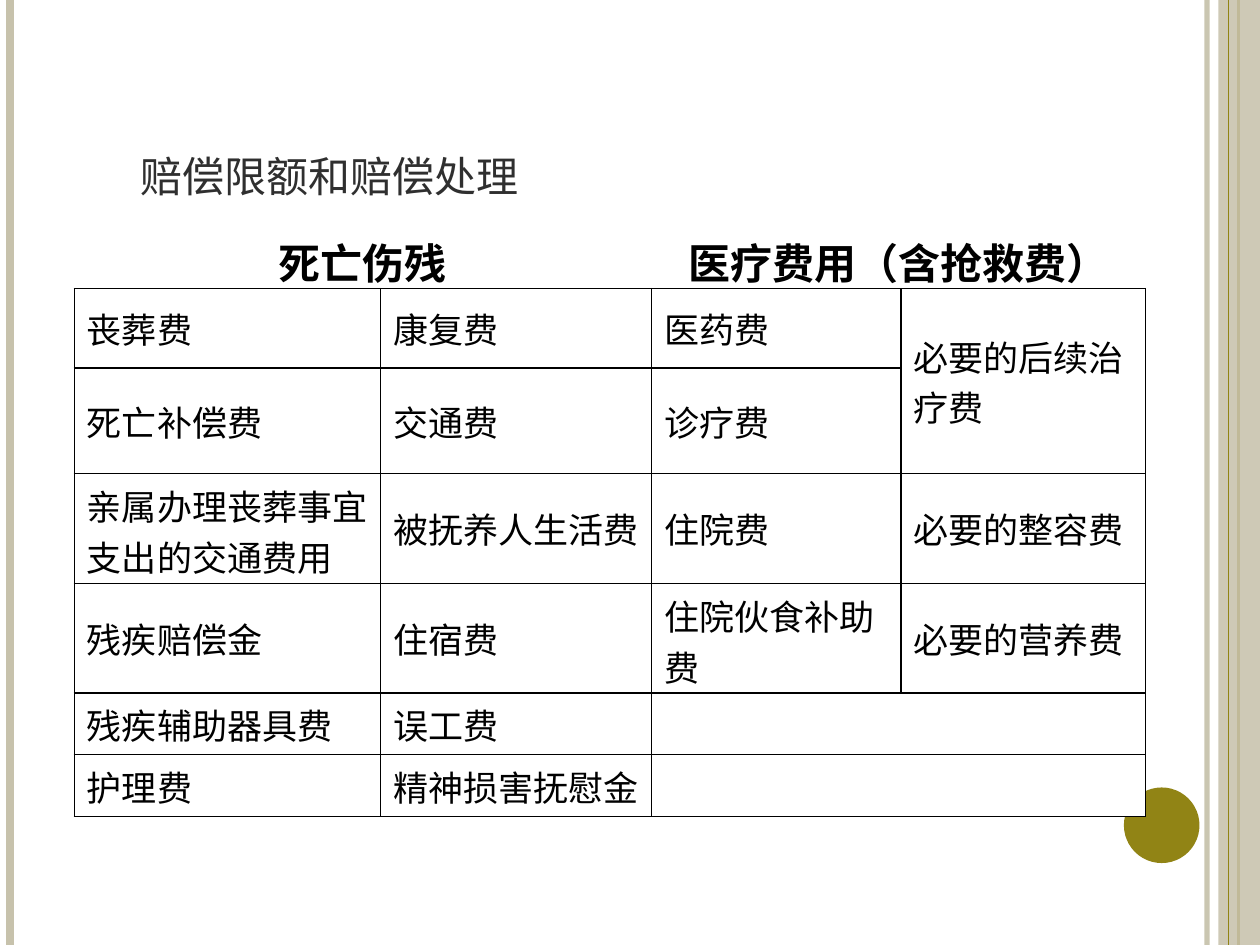
from typing import NamedTuple, Optional

from lxml.etree import SubElement
from pptx import Presentation
from pptx.dml.color import RGBColor
from pptx.enum.shapes import MSO_CONNECTOR as Connector, MSO_SHAPE as Shape
from pptx.enum.text import MSO_ANCHOR as Anchor, PP_ALIGN as Align
from pptx.oxml.ns import qn
from pptx.util import Inches, Pt

BLACK = RGBColor(0x00, 0x00, 0x00)
WHITE = RGBColor(0xFF, 0xFF, 0xFF)
SAND = RGBColor(0xC7, 0xC2, 0xAC)
OLIVE = RGBColor(0x91, 0x84, 0x15)
CHARCOAL = RGBColor(0x2F, 0x2F, 0x2F)
SLIDE_HEIGHT = 7.5
COLUMN_WIDTHS = [2.43, 2.15, 1.98, 1.94]
ROW_HEIGHTS = [0.51, 0.63, 0.84, 0.87, 0.87, 0.49, 0.49]


class Stripe(NamedTuple):
    x: float
    width: float
    color: RGBColor
    opacity: Optional[int] = None


class Ornament(NamedTuple):
    shape: Shape
    left: float
    top: float
    width: float
    height: float
    color: RGBColor
    opacity: Optional[int] = None


LEFT_STRIPES = [Stripe(9.58, 3, SAND, 93), Stripe(0.08, 4.5, SAND), Stripe(9.83, 1.5, OLIVE)]
SIDE_BAND = Ornament(Shape.RECTANGLE, 9.67, 0, 0.33, SLIDE_HEIGHT, SAND, 87)
BAND_STRIPE = Stripe(9.75, 0.75, OLIVE)
DISC = Ornament(Shape.OVAL, 8.92, 6.25, 0.6, 0.6, OLIVE)

EXPENSES = [
    ["死亡伤残", "", "医疗费用（含抢救费）", ""],
    ["丧葬费", "康复费", "医药费", "必要的后续治疗费"],
    ["死亡补偿费", "交通费", "诊疗费", ""],
    ["亲属办理丧葬事宜支出的交通费用", "被抚养人生活费", "住院费", "必要的整容费"],
    ["残疾赔偿金", "住宿费", "住院伙食补助费", "必要的营养费"],
    ["残疾辅助器具费", "误工费", "", ""],
    ["护理费", "精神损害抚慰金", "", ""],
]
MERGES = [((0, 0), (0, 1)), ((0, 2), (0, 3)), ((1, 3), (2, 3)),
          ((5, 2), (5, 3)), ((6, 2), (6, 3))]
FLUSH_CELLS = {(1, 3), (3, 0), (4, 2)}


def set_opacity(properties, opacity: Optional[int]) -> None:
    if opacity is not None:
        color = next(properties.iter(qn("a:srgbClr")))
        SubElement(color, qn("a:alpha"), val=str(opacity * 1000))


def draw_stripe(slide, stripe: Stripe) -> None:
    x = Inches(stripe.x)
    line = slide.shapes.add_connector(Connector.STRAIGHT, x, 0, x, Inches(SLIDE_HEIGHT))
    line.line.color.rgb = stripe.color
    line.line.width = Pt(stripe.width)
    properties = line._element.spPr
    set_opacity(properties, stripe.opacity)
    SubElement(properties, qn("a:effectLst"))


def draw_ornament(slide, ornament: Ornament) -> None:
    bounds = [Inches(length) for length in ornament[1:5]]
    body = slide.shapes.add_shape(ornament.shape, *bounds)
    body.shadow.inherit = False
    body.fill.solid()
    body.fill.fore_color.rgb = ornament.color
    body.line.fill.background()
    set_opacity(body._element.spPr, ornament.opacity)


def set_hanging(paragraph, indent: float) -> None:
    properties = paragraph._p.get_or_add_pPr()
    properties.set("marL", str(Inches(indent)))
    properties.set("indent", str(-Inches(indent)))


def style_run(paragraph, font_name: str, size: float, color: RGBColor, bold: bool = False) -> None:
    for run in paragraph.runs:
        run.font.name = font_name
        run.font.size = Pt(size)
        run.font.color.rgb = color
        run.font.bold = bold


def draw_title(slide, wording: str) -> None:
    title = slide.shapes.add_textbox(Inches(1.02), Inches(0.11), Inches(7.83), Inches(1.55))
    frame = title.text_frame
    frame.word_wrap = True
    frame.vertical_anchor = Anchor.BOTTOM
    frame.text = wording
    heading = frame.paragraphs[0]
    set_hanging(heading, 1.11)
    style_run(heading, "TeX Gyre Schola", 30, CHARCOAL)
    heading.runs[0].font._element.set("cap", "small")


def set_borders(cell, visible_sides: str) -> None:
    properties = cell._tc.get_or_add_tcPr()
    for position, side in enumerate("LRTB"):
        border = properties.makeelement(qn(f"a:ln{side}"), {"w": str(Pt(1))})
        if side in visible_sides:
            fill = SubElement(border, qn("a:solidFill"))
            SubElement(fill, qn("a:srgbClr"), val=str(BLACK))
        else:
            SubElement(border, qn("a:noFill"))
        properties.insert(position, border)


def fill_cell(cell, wording: str, is_header: bool, is_flush: bool) -> None:
    cell.vertical_anchor = Anchor.MIDDLE
    if is_header:
        cell.fill.background()
    else:
        cell.fill.solid()
        cell.fill.fore_color.rgb = WHITE
    set_borders(cell, "B" if is_header else "LRTB")
    if wording:
        cell.text_frame.text = wording
        entry = cell.text_frame.paragraphs[0]
        entry.alignment = Align.CENTER if is_header else Align.LEFT
        if not is_flush:
            set_hanging(entry, 0.49)
        style_run(entry, "Times New Roman", 24 if is_header else 20, BLACK, is_header)


def draw_expenses(slide) -> None:
    table = slide.shapes.add_table(
        len(ROW_HEIGHTS), len(COLUMN_WIDTHS), Inches(0.59), Inches(1.78),
        Inches(sum(COLUMN_WIDTHS)), Inches(sum(ROW_HEIGHTS))).table
    table.first_row = False
    table.horz_banding = False
    for column, width in zip(table.columns, COLUMN_WIDTHS):
        column.width = Inches(width)
    for row, height in zip(table.rows, ROW_HEIGHTS):
        row.height = Inches(height)
    for start, end in MERGES:
        table.cell(*start).merge(table.cell(*end))
    for r, entries in enumerate(EXPENSES):
        for c, wording in enumerate(entries):
            fill_cell(table.cell(r, c), wording, r == 0, (r, c) in FLUSH_CELLS)


def main() -> None:
    """Build the slide on compensation limits and save it."""
    deck = Presentation()
    deck.slide_width = Inches(10)
    deck.slide_height = Inches(SLIDE_HEIGHT)
    slide = deck.slides.add_slide(deck.slide_layouts[6])
    for stripe in LEFT_STRIPES:
        draw_stripe(slide, stripe)
    draw_ornament(slide, SIDE_BAND)
    draw_stripe(slide, BAND_STRIPE)
    draw_ornament(slide, DISC)
    draw_title(slide, "赔偿限额和赔偿处理")
    draw_expenses(slide)
    deck.save("out.pptx")


if __name__ == "__main__":
    main()
